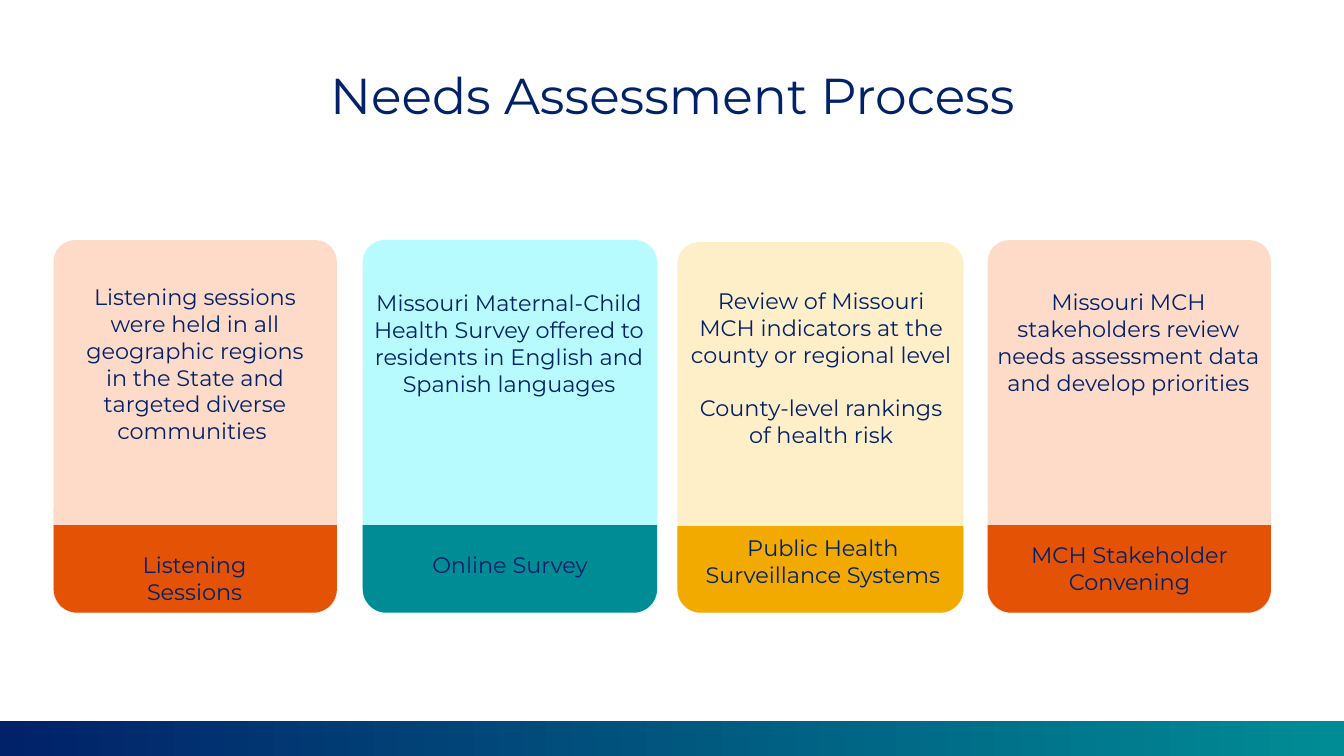
from dataclasses import dataclass

import pptx
import pptx.dml.color
import pptx.enum.shapes
import pptx.enum.text
import pptx.util

Cm = pptx.util.Cm
SHAPE = pptx.enum.shapes.MSO_SHAPE
ANCHOR = pptx.enum.text.MSO_ANCHOR


@dataclass(frozen=True)
class Theme:
    font: str = "Montserrat"
    navy: str = "012169"
    teal: str = "008C95"
    aqua: str = "B7FBFF"
    orange: str = "E35205"
    peach: str = "FEDBC9"
    gold: str = "F2A900"
    cream: str = "FFEFC9"
    title_size: int = 36
    text_size: int = 16
    paragraph_gap: int = 19


@dataclass(frozen=True)
class Step:
    left: float
    width: float
    top: float
    band_top: float
    pale: str
    strong: str
    label: str
    label_box: tuple
    details: tuple
    details_box: tuple


THEME = Theme()
SLIDE_WIDTH, SLIDE_HEIGHT = 33.87, 19.05
CARD_BOTTOM = 15.44
FOOTER_HEIGHT = 0.87

STEPS = (
    Step(1.35, 7.14, 6.05, 13.23, THEME.peach, THEME.orange,
         "Listening Sessions", (2.11, 13.77, 5.59, 1.62),
         ("Listening sessions were held in all geographic regions in the State "
          "and targeted diverse communities ",), (1.6, 7.01, 6.63, 4.37)),
    Step(9.14, 7.42, 6.05, 13.23, THEME.aqua, THEME.teal,
         "Online Survey", (9.91, 13.77, 5.89, 0.9),
         ("Missouri Maternal-Child Health Survey offered to residents in English "
          "and Spanish languages",), (9.12, 7.16, 7.42, 3)),
    Step(17.07, 7.21, 6.1, 13.26, THEME.cream, THEME.gold,
         "Public Health Surveillance Systems", (17.07, 13.34, 7.34, 1.55),
         ("Review of Missouri MCH indicators at the county or regional level",
          "County-level rankings of health risk"), (17.09, 7.11, 7.21, 4.37)),
    Step(24.89, 7.14, 6.05, 13.23, THEME.peach, THEME.orange,
         "MCH Stakeholder Convening", (25.15, 13.51, 6.63, 1.62),
         ("Missouri MCH stakeholders review needs assessment data and develop "
          "priorities",), (24.87, 7.14, 7.14, 3)),
)


def rgb(value):
    return pptx.dml.color.RGBColor.from_string(value)


def add_panel(shapes, kind, box, color, adjustments):
    panel = shapes.add_shape(kind, *map(Cm, box))
    panel.shadow.inherit = False
    panel.fill.solid()
    panel.fill.fore_color.rgb = rgb(color)
    panel.line.fill.background()
    for index, value in enumerate(adjustments):
        panel.adjustments[index] = value
    return panel


def add_text(shapes, box, lines, size, anchor=ANCHOR.TOP, spacing=None):
    frame = shapes.add_textbox(*map(Cm, box)).text_frame
    frame.word_wrap = True
    frame.vertical_anchor = anchor
    for index, line in enumerate(lines):
        paragraph = frame.add_paragraph() if index else frame.paragraphs[0]
        paragraph.text = line
        paragraph.alignment = pptx.enum.text.PP_ALIGN.CENTER
        paragraph.line_spacing = spacing
        if index:
            paragraph.space_before = pptx.util.Pt(THEME.paragraph_gap)
        paragraph.font.name = THEME.font
        paragraph.font.size = pptx.util.Pt(size)
        paragraph.font.color.rgb = rgb(THEME.navy)


def add_step(slide, step):
    card = slide.shapes.add_group_shape().shapes
    add_panel(card, SHAPE.ROUNDED_RECTANGLE,
              (step.left, step.top, step.width, CARD_BOTTOM - step.top),
              step.pale, (0.076,))
    band = add_panel(card, SHAPE.ROUND_2_SAME_RECTANGLE,
                     (step.left, step.band_top, step.width,
                      CARD_BOTTOM - step.band_top),
                     step.strong, (0.273, 0))
    band.rotation = 180
    add_text(card, step.label_box, (step.label,), THEME.text_size)
    add_text(card, step.details_box, step.details, THEME.text_size)


def add_footer(slide):
    footer = add_panel(slide.shapes, SHAPE.RECTANGLE,
                       (0, SLIDE_HEIGHT - FOOTER_HEIGHT, SLIDE_WIDTH, FOOTER_HEIGHT),
                       THEME.navy, ())
    footer.fill.gradient()
    footer.fill.gradient_angle = 0
    for stop, position, color in zip(footer.fill.gradient_stops, (0, 1),
                                     (THEME.navy, THEME.teal)):
        stop.position = position
        stop.color.rgb = rgb(color)


def main():
    deck = pptx.Presentation()
    deck.slide_width, deck.slide_height = Cm(SLIDE_WIDTH), Cm(SLIDE_HEIGHT)
    slide = deck.slides.add_slide(deck.slide_layouts[6])
    add_text(slide.shapes, (2.34, 1.04, 29.21, 2.87),
             ("Needs Assessment Process",), THEME.title_size, ANCHOR.MIDDLE, 0.9)
    for step in STEPS:
        add_step(slide, step)
    add_footer(slide)
    deck.save("out.pptx")


if __name__ == "__main__":
    main()
